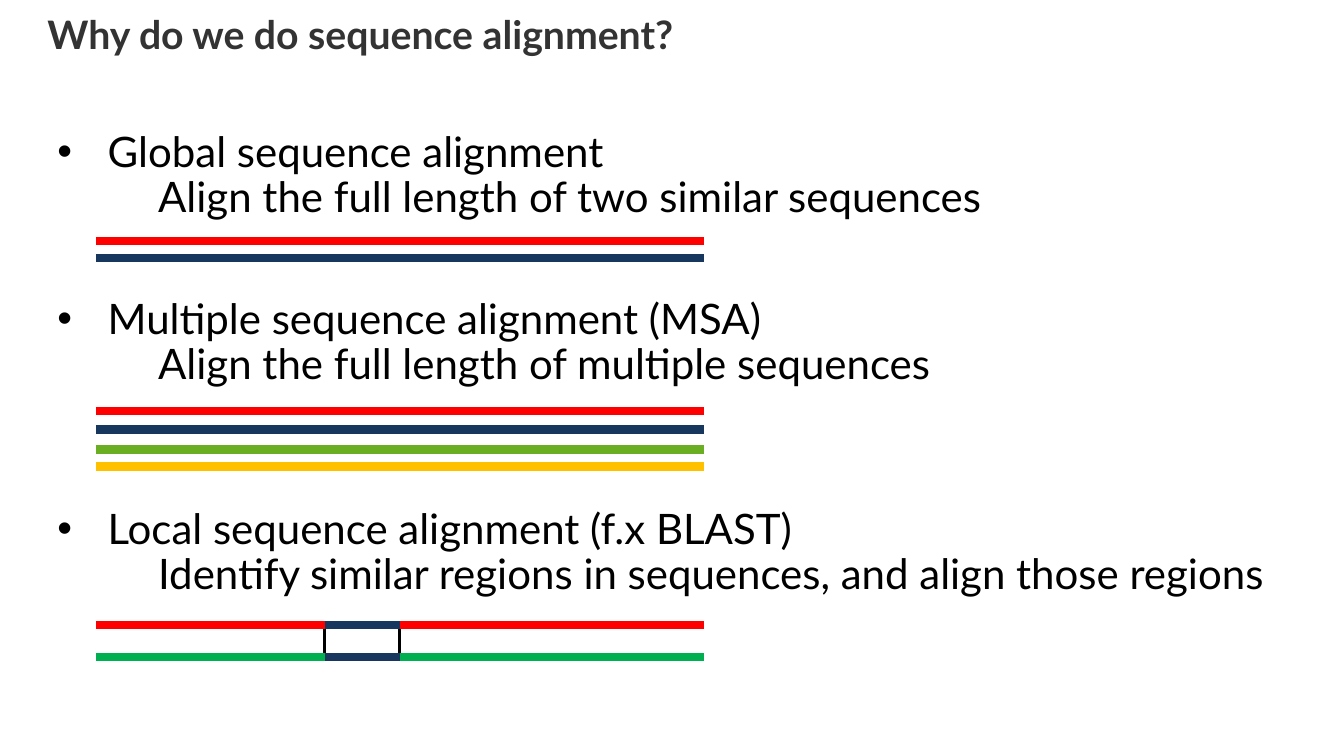
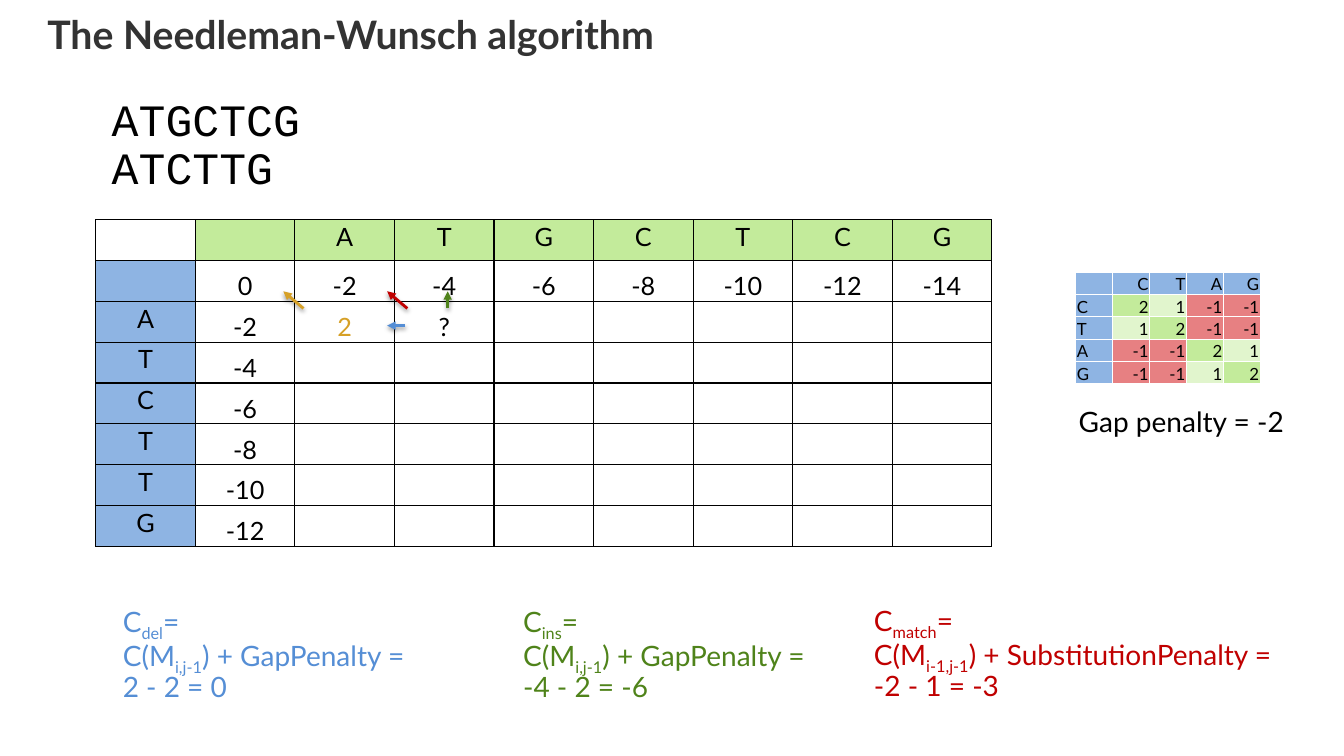
from dataclasses import dataclass

import lxml.etree
import pptx
import pptx.dml.color
import pptx.enum.shapes
import pptx.enum.text
import pptx.oxml.ns
import pptx.util

Inches = pptx.util.Inches
Pt = pptx.util.Pt
Align = pptx.enum.text.PP_ALIGN
Anchor = pptx.enum.text.MSO_ANCHOR
qn = pptx.oxml.ns.qn

HUES = {
    "black": "000000", "white": "FFFFFF", "title": "333333",
    "red": "FF0000", "navy": "17375E", "leaf": "69AE23", "amber": "FFC000",
    "green": "00B050", "lime": "C3EB9B", "pale": "E1F5CD", "rose": "E78082",
    "sky": "8EB4E3", "gold": "D6A026", "blue": "558ED5", "moss": "4F831A",
    "wine": "C00000",
}
FONT = "Lato"
ACROSS = "ATGCTCG"
DOWN = "ATCTTG"
BASES = "CTAG"
PAIRS = ("CT", "AG")
GAP = -2
SHADES = {2: "lime", 1: "pale", -1: "rose"}


@dataclass
class Box:
    left: float
    top: float
    width: float
    height: float


@dataclass
class Topic:
    top: float
    width: float
    head: str
    note: str


@dataclass
class Stroke:
    x1: float
    y1: float
    x2: float
    y2: float
    hue: str
    size: float = 6
    arrow: bool = False


@dataclass
class Cell:
    text: str
    fill: str
    hue: str = "black"
    align: Align = Align.CENTER
    tight: bool = True


@dataclass
class Rule:
    box: Box
    hue: str
    label: str
    index: str
    term: str
    result: str


def color(hue: str) -> pptx.dml.color.RGBColor:
    return pptx.dml.color.RGBColor.from_string(HUES[hue])


def style(para, size: float, hue: str = "black", name: str = FONT, bold: bool = False) -> None:
    para.line_spacing = 0.9
    for run in para.runs:
        run.font.size = Pt(size)
        run.font.name = name
        run.font.bold = bold
        run.font.color.rgb = color(hue)


def add_box(slide, box: Box, wrap: bool = True, grow: bool = True):
    shape = slide.shapes.add_textbox(
        Inches(box.left), Inches(box.top), Inches(box.width), Inches(box.height))
    frame = shape.text_frame
    frame.word_wrap = wrap
    if grow:
        frame.auto_size = pptx.enum.text.MSO_AUTO_SIZE.SHAPE_TO_FIT_TEXT
    return frame


def add_text(slide, box: Box, text: str, size: float, name: str = FONT) -> None:
    frame = add_box(slide, box, wrap=False)
    frame.text = text
    for para in frame.paragraphs:
        style(para, size, name=name)


def add_slide(deck, title: str):
    slide = deck.slides.add_slide(deck.slide_layouts[6])
    frame = add_box(slide, Box(0.47, 0.16, 11.28, 0.9), grow=False)
    frame.margin_left = frame.margin_right = frame.margin_top = frame.margin_bottom = 0
    frame.text = title
    style(frame.paragraphs[0], 28, "title", bold=True)
    return slide


def add_topic(slide, topic: Topic) -> None:
    frame = add_box(slide, Box(0.47, topic.top, topic.width, 1.01))
    head = frame.paragraphs[0]
    head.text = topic.head
    props = head._p.get_or_add_pPr()
    props.set("marL", str(Inches(0.5)))
    props.set("indent", str(-Inches(0.5)))
    lxml.etree.SubElement(props, qn("a:buFont")).set("typeface", "Arial")
    lxml.etree.SubElement(props, qn("a:buChar")).set("char", "•")
    note = frame.add_paragraph()
    note.text = topic.note
    note._p.get_or_add_pPr().set("marL", str(Inches(1)))
    for para in frame.paragraphs:
        style(para, 30)


def add_stroke(slide, stroke: Stroke) -> None:
    line = slide.shapes.add_connector(
        pptx.enum.shapes.MSO_CONNECTOR.STRAIGHT,
        Inches(stroke.x1), Inches(stroke.y1), Inches(stroke.x2), Inches(stroke.y2))
    line.line.color.rgb = color(stroke.hue)
    line.line.width = Pt(stroke.size)
    props = line._element.spPr
    effects = lxml.etree.SubElement(props, qn("a:effectLst"))
    if stroke.arrow:
        tip = lxml.etree.SubElement(props.find(qn("a:ln")), qn("a:tailEnd"))
        tip.set("type", "triangle")
        shade = lxml.etree.SubElement(
            effects, qn("a:outerShdw"), blurRad=str(Pt(3.1)), dist=str(Pt(1.6)),
            dir="5400000", rotWithShape="0")
        tone = lxml.etree.SubElement(shade, qn("a:srgbClr"), val=HUES["black"])
        lxml.etree.SubElement(tone, qn("a:alpha"), val="38000")


def add_edges(cell, hue: str) -> None:
    props = cell._tc.get_or_add_tcPr()
    for side in ("lnL", "lnR", "lnT", "lnB"):
        edge = lxml.etree.SubElement(props, qn("a:" + side), w=str(Pt(1)))
        fill = lxml.etree.SubElement(edge, qn("a:solidFill"))
        lxml.etree.SubElement(fill, qn("a:srgbClr"), val=HUES[hue])


def add_grid(slide, box: Box, rows: list[list[Cell]], size: float, edge: str) -> None:
    table = slide.shapes.add_table(
        len(rows), len(rows[0]), Inches(box.left), Inches(box.top),
        Inches(box.width), Inches(box.height)).table
    table.first_row = table.horz_banding = False
    for r, row in enumerate(rows):
        for c, item in enumerate(row):
            cell = table.cell(r, c)
            add_edges(cell, edge)
            cell.fill.solid()
            cell.fill.fore_color.rgb = color(item.fill)
            if item.tight:
                cell.vertical_anchor = Anchor.BOTTOM
                cell.margin_left = cell.margin_right = cell.margin_top = Inches(0.01)
                cell.margin_bottom = 0
            para = cell.text_frame.paragraphs[0]
            para.text = item.text
            para.alignment = item.align
            style(para, size, item.hue)
            if not item.text:
                lxml.etree.SubElement(para._p, qn("a:endParaRPr"), sz=str(size * 100))


def matrix() -> list[list[Cell]]:
    rows = [[Cell("", "white", tight=False)]
            + [Cell(base, "lime", tight=False) for base in ("", *ACROSS)]]
    for r, base in enumerate(("", *DOWN)):
        row = [Cell(base, "sky", tight=False)]
        for c in range(len(ACROSS) + 1):
            text = str(GAP * (r + c)) if r == 0 or c == 0 else ""
            row.append(Cell(text, "white"))
        rows.append(row)
    rows[2][2] = Cell("2", "white", "gold")
    rows[2][3] = Cell("?", "white")
    return rows


def score(one: str, two: str) -> int:
    if one == two:
        return 2
    return 1 if any(one in pair and two in pair for pair in PAIRS) else -1


def scores() -> list[list[Cell]]:
    rows = [[Cell(base, "sky", align=Align.RIGHT) for base in ("", *BASES)]]
    for one in BASES:
        marks = [score(one, two) for two in BASES]
        rows.append([Cell(one, "sky", align=Align.LEFT)]
                    + [Cell(str(mark), SHADES[mark], align=Align.RIGHT) for mark in marks])
    return rows


def add_rule(slide, rule: Rule) -> None:
    frame = add_box(slide, rule.box)
    lines = (("C", rule.label, "="),
             ("C(M", rule.index, f") + {rule.term} ="),
             (rule.result,))
    for i, parts in enumerate(lines):
        para = frame.add_paragraph() if i else frame.paragraphs[0]
        for part in parts:
            para.add_run().text = part
        style(para, 20, rule.hue)
        if len(parts) > 1:
            para.runs[1]._r.get_or_add_rPr().set("baseline", "-25000")


def draw_kinds(deck) -> None:
    slide = add_slide(deck, "Why do we do sequence alignment?")
    topics = (
        Topic(1.25, 11.85, "Global sequence alignment",
              "Align the full length of two similar sequences"),
        Topic(2.91, 11.85, "Multiple sequence alignment (MSA)",
              "Align the full length of multiple sequences"),
        Topic(4.99, 12.46, "Local sequence alignment (f.x BLAST)",
              "Identify similar regions in sequences, and align those regions"),
    )
    for topic in topics:
        add_topic(slide, topic)
    left, start, stop, right = 0.95, 3.22, 3.97, 6.98
    upper, lower = 6.2, 6.52
    bars = ((2.39, "red"), (2.56, "navy"), (4.08, "red"),
            (4.26, "navy"), (4.46, "leaf"), (4.63, "amber"))
    strokes = [Stroke(left, y, right, y, hue) for y, hue in bars]
    strokes += [Stroke(x, upper, x, lower, "black", 2.25) for x in (start, stop - 0.01)]
    for y, hue in ((upper, "red"), (lower, "green")):
        strokes += [Stroke(left, y, start, y, hue), Stroke(start, y, stop, y, "navy"),
                    Stroke(stop, y, right, y, hue)]
    for stroke in strokes:
        add_stroke(slide, stroke)


def draw_method(deck) -> None:
    slide = add_slide(deck, "The Needleman-Wunsch algorithm")
    add_grid(slide, Box(0.95, 2.18, 8.89, 3.24), matrix(), 18, "black")
    add_text(slide, Box(1.01, 0.92, 2.09, 1.08), f"{ACROSS}\n{DOWN}", 32, "Courier New")
    add_grid(slide, Box(10.67, 2.7, 1.83, 1.11), scores(), 12, "white")
    add_text(slide, Box(10.6, 4, 2.31, 0.4), f"Gap penalty = {GAP}", 20)
    rules = (
        Rule(Box(8.57, 5.94, 4.37, 1.01), "wine", "match", "i-1,j-1",
             "SubstitutionPenalty", "-2 - 1 = -3"),
        Rule(Box(5.09, 5.95, 3.23, 1.01), "moss", "ins", "i,j-1",
             "GapPenalty", "-4 - 2 = -6"),
        Rule(Box(1.12, 5.95, 3.17, 1.01), "blue", "del", "i,j-1",
             "GapPenalty", "2 - 2 = 0"),
    )
    for rule in rules:
        add_rule(slide, rule)
    arrows = ((3.01, 3.06, 2.81, 2.89, "gold"), (4.02, 3.23, 3.84, 3.23, "blue"),
              (4.44, 3.06, 4.44, 2.89, "moss"), (4.04, 3.06, 3.84, 2.89, "wine"))
    for arrow in arrows:
        add_stroke(slide, Stroke(*arrow, size=2, arrow=True))


def main() -> None:
    deck = pptx.Presentation()
    deck.slide_width = Inches(13.33)
    deck.slide_height = Inches(7.5)
    draw_kinds(deck)
    draw_method(deck)
    deck.save("out.pptx")


if __name__ == "__main__":
    main()
